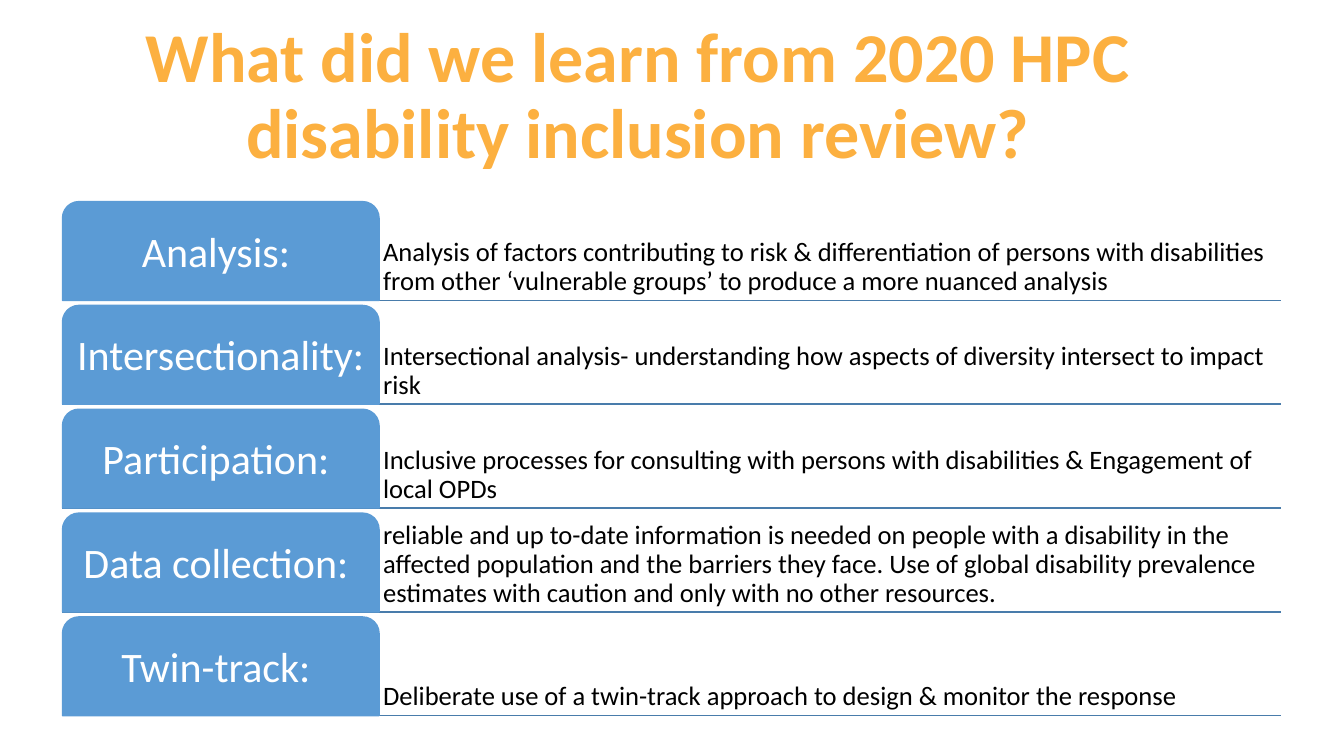
from pptx import Presentation, util as u
from pptx.dml.color import RGBColor
from pptx.enum import shapes, text
from pptx.oxml.ns import qn
from lxml import etree

COLOURS = {"heading": "FCB040", "tab": "5B9BD5", "rule": "497CAB",
           "label": "FFFFFF", "detail": "000000", "paper": "FFFFFF"}
LEFT, TOP = 0.62, 2.0
LABEL_WIDTH, DETAIL_WIDTH = 3.14, 8.95
ROW_HEIGHT, ROW_STEP = 0.98, 1.03
LESSONS = [
    ("Analysis: ", "Analysis of factors contributing to risk & differentiation of persons "
     "with disabilities from other ‘vulnerable groups’ to produce a more nuanced analysis"),
    ("Intersectionality: ", "Intersectional analysis- understanding how aspects of diversity "
     "intersect to impact risk"),
    ("Participation: ", "Inclusive processes for consulting with persons with disabilities "
     "& Engagement of local OPDs"),
    ("Data collection: ", "reliable and up to-date information is needed on people with a "
     "disability in the affected population and the barriers they face. Use of global "
     "disability prevalence estimates with caution and only with no other resources."),
    ("Twin-track: ", "Deliberate use of a twin-track approach to design & monitor the response"),
]


def colour(name):
    return RGBColor.from_string(COLOURS[name])


def set_all(target, values):
    for name, value in values.items():
        setattr(target, name, value)


def paint(shape, fill, width):
    shape.fill.solid()
    shape.fill.fore_color.rgb = colour(fill)
    shape.line.color.rgb = colour(fill)
    shape.line.width = u.Pt(width)


def write(shape, words, size, tint, anchor, align, inset, bold=False):
    frame = shape.text_frame
    margin = u.Inches(inset)
    set_all(frame, {"word_wrap": True, "auto_size": text.MSO_AUTO_SIZE.NONE,
                    "vertical_anchor": anchor, "margin_left": margin, "margin_top": margin,
                    "margin_right": margin, "margin_bottom": margin})
    para = frame.paragraphs[0]
    set_all(para, {"alignment": align, "line_spacing": 0.9, "space_before": u.Pt(0)})
    span = para.add_run()
    span.text = words
    set_all(span.font, {"name": "Calibri", "size": u.Pt(size), "bold": bold})
    span.font.color.rgb = colour(tint)


def add_heading(page):
    title = page.shapes.title
    set_all(title, {"left": u.Inches(0.19), "top": u.Inches(0.29),
                    "width": u.Inches(12.28), "height": u.Inches(1.36)})
    paint(title, "paper", 0.75)
    write(title, "What did we learn from 2020 HPC disability inclusion review?", 50,
          "heading", text.MSO_ANCHOR.MIDDLE, text.PP_ALIGN.CENTER, 0.05, True)


def add_rule(page, top):
    right = LEFT + LABEL_WIDTH + DETAIL_WIDTH
    rule = page.shapes.add_connector(shapes.MSO_CONNECTOR.STRAIGHT, u.Inches(LEFT),
                                     u.Inches(top), u.Inches(right), u.Inches(top))
    rule.line.color.rgb = colour("rule")
    rule.line.width = u.Pt(1)
    etree.SubElement(rule._element.spPr, qn("a:effectLst"))


def add_label(page, top, words):
    tab = page.shapes.add_shape(shapes.MSO_SHAPE.ROUND_2_SAME_RECTANGLE, u.Inches(LEFT),
                                u.Inches(top), u.Inches(LABEL_WIDTH), u.Inches(ROW_HEIGHT))
    tab.shadow.inherit = False
    paint(tab, "tab", 1)
    write(tab, words, 30, "label", text.MSO_ANCHOR.MIDDLE, text.PP_ALIGN.CENTER, 0.06)


def add_detail(page, top, words):
    box = page.shapes.add_textbox(u.Inches(LEFT + LABEL_WIDTH), u.Inches(top),
                                  u.Inches(DETAIL_WIDTH), u.Inches(ROW_HEIGHT))
    write(box, words, 19, "detail", text.MSO_ANCHOR.BOTTOM, text.PP_ALIGN.LEFT, 0.04)


def main():
    deck = Presentation()
    set_all(deck, {"slide_width": u.Inches(13.33), "slide_height": u.Inches(7.5)})
    page = deck.slides.add_slide(deck.slide_layouts[5])
    add_heading(page)
    for row, (label, detail) in enumerate(LESSONS):
        top = TOP + row * ROW_STEP
        add_rule(page, top + ROW_HEIGHT)
        add_detail(page, top, detail)
        add_label(page, top, label)
    deck.save("out.pptx")


if __name__ == "__main__":
    main()
